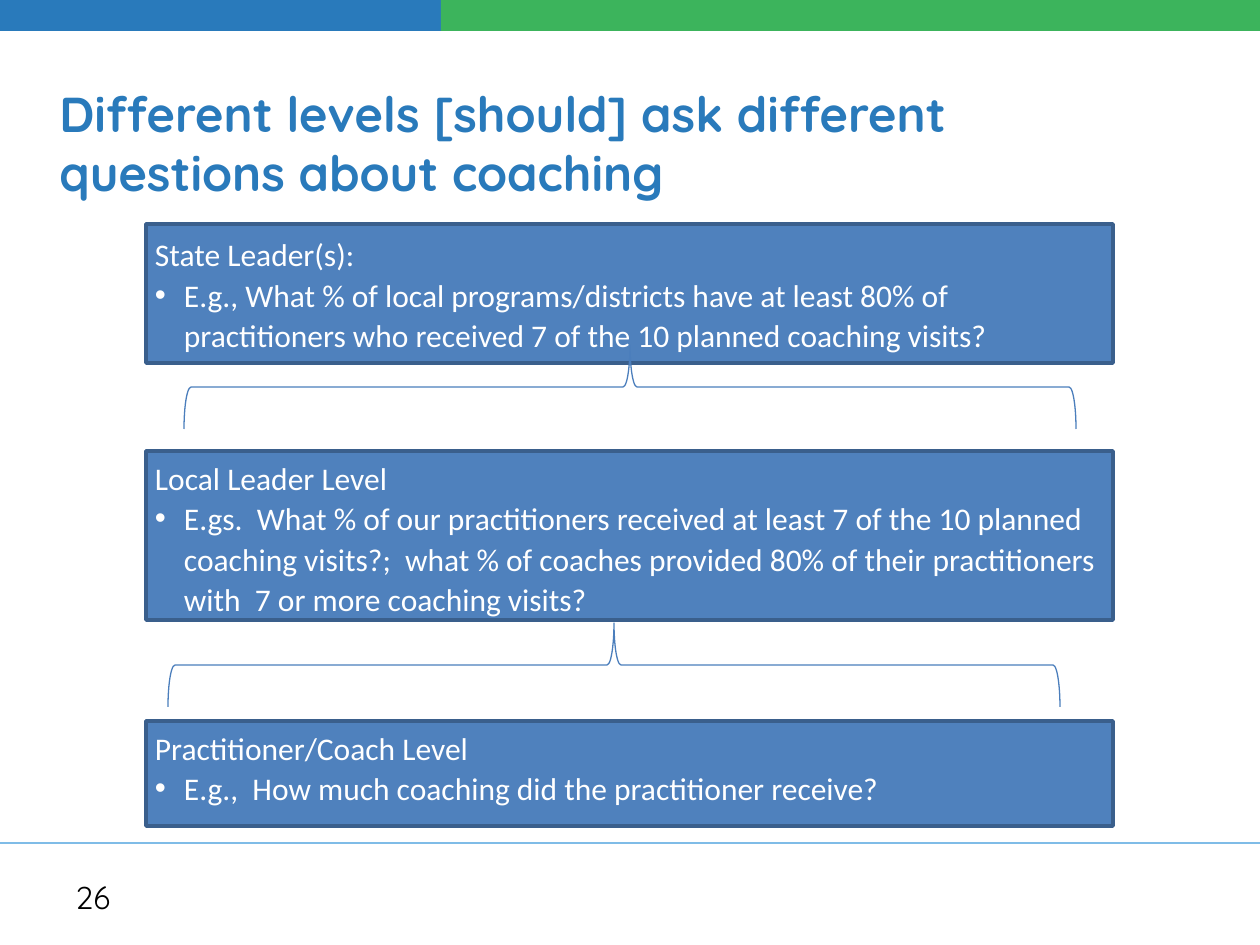
import pptx
import pptx.util
import pptx.dml.color
import pptx.enum.shapes
import pptx.enum.text
import pptx.oxml.ns
import lxml.etree

PX = 914400 / 126
WIDE, HIGH = 1260, 945
HUES = {"blue": "297ABB", "green": "3CB45C", "rule": "7FBCE7", "fill": "4F81BD",
        "edge": "3A5F8C", "brace": "4B7EBC", "white": "FFFFFF", "black": "000000"}
FORM = pptx.enum.shapes.MSO_SHAPE
MID = pptx.enum.text.MSO_ANCHOR.MIDDLE
TOP = pptx.enum.text.MSO_ANCHOR.TOP

LEVELS = [
    (224, 139, MID, "State Leader(s):",
     "E.g., What % of local programs/districts have at least 80% of practitioners "
     "who received 7 of the 10 planned coaching visits?"),
    (451, 169, TOP, "Local Leader Level",
     "E.gs.  What % of our practitioners received at least 7 of the 10 planned "
     "coaching visits?;  what % of coaches provided 80% of their practitioners "
     "with  7 or more coaching visits?"),
    (721, 105, TOP, "Practitioner/Coach Level",
     "E.g.,  How much coaching did the practitioner receive?"),
]


def emu(*px):
    """Turn px lengths into EMU."""
    return [pptx.util.Emu(round(n * PX)) for n in px]


def hue(name):
    """Look up a named colour."""
    return pptx.dml.color.RGBColor.from_string(HUES[name])


def shape(slide, form, box, fill=None, edge=None, width=1):
    """Add a preset shape without a shadow."""
    item = slide.shapes.add_shape(form, *emu(*box))
    item.shadow.inherit = False
    if fill:
        item.fill.solid()
        item.fill.fore_color.rgb = hue(fill)
    else:
        item.fill.background()
    if edge:
        item.line.color.rgb = hue(edge)
        item.line.width = pptx.util.Pt(width)
    else:
        item.line.fill.background()
    return item


def write(para, text, size, face, tint, bold=False):
    """Add one styled run to a paragraph."""
    run = para.add_run()
    run.text = text
    run.font.size = pptx.util.Pt(size)
    run.font.name = face
    run.font.bold = bold
    run.font.color.rgb = hue(tint)


def label(slide, box, text, size, tint, bold=False):
    """Place a line of heading text, centred in height."""
    frame = slide.shapes.add_textbox(*emu(*box)).text_frame
    frame.word_wrap = True
    frame.vertical_anchor = MID
    write(frame.paragraphs[0], text, size, "Quicksand", tint, bold)


def bullet(para, indent):
    """Give a paragraph a hanging round bullet."""
    props = para._p.get_or_add_pPr()
    step = emu(indent)[0]
    props.set("marL", str(step))
    props.set("indent", str(-step))
    for tag, key, value in (("a:buFont", "typeface", "Arial"), ("a:buChar", "char", "•")):
        lxml.etree.SubElement(props, pptx.oxml.ns.qn(tag)).set(key, value)


def panel(slide, box, anchor, head, query):
    """Draw one level with its heading and sample question."""
    item = shape(slide, FORM.FLOWCHART_PROCESS, box, "fill", "edge", 2)
    frame = item.text_frame
    frame.word_wrap = True
    frame.vertical_anchor = anchor
    frame.margin_left, frame.margin_right = emu(9, 9)
    frame.margin_top, frame.margin_bottom = emu(5, 5)
    first, second = frame.paragraphs[0], frame.add_paragraph()
    bullet(second, 29)
    for para, text in ((first, head), (second, query)):
        para.alignment = pptx.enum.text.PP_ALIGN.LEFT
        para.line_spacing = 1.07
        write(para, text, 18, "Calibri", "white")


def brace(slide, box):
    """Draw a brace that opens downward and fills the box."""
    left, top, width, height = box
    shift = (width - height) / 2
    turned = (left + shift, top - shift, height, width)
    shape(slide, FORM.LEFT_BRACE, turned, None, "brace", 0.75).rotation = 90


def trim(slide, box):
    """Draw the colour bars at the top and the rule above the foot."""
    left, top, width, height = box
    split = 441
    shape(slide, FORM.RECTANGLE, (left, top, split, 31), "blue")
    shape(slide, FORM.RECTANGLE, (left + split, top, width - split, 31), "green")
    level = top + height - 102
    rule = slide.shapes.add_connector(pptx.enum.shapes.MSO_CONNECTOR.STRAIGHT,
                                      *emu(left, level, left + width, level))
    rule.line.color.rgb = hue("rule")
    rule.line.width = pptx.util.Pt(1.5)
    lxml.etree.SubElement(rule._element.spPr, pptx.oxml.ns.qn("a:effectLst"))


def main():
    """Build and save the slide."""
    deck = pptx.Presentation()
    deck.slide_width, deck.slide_height = emu(WIDE, HIGH)
    slide = deck.slides.add_slide(deck.slide_layouts[6])
    trim(slide, (0, 0, WIDE, HIGH))
    label(slide, (63, 872, 294, 50), "26", 18, "black")
    label(slide, (47, 52, 1086, 180),
          "Different levels [should] ask different questions about coaching",
          28, "blue", True)
    for top, height, anchor, head, query in LEVELS:
        panel(slide, (146, top, 967, height), anchor, head, query)
    for left, top in ((184, 345), (168, 623)):
        brace(slide, (left, top, 892, 84))
    deck.save("out.pptx")


if __name__ == "__main__":
    main()
